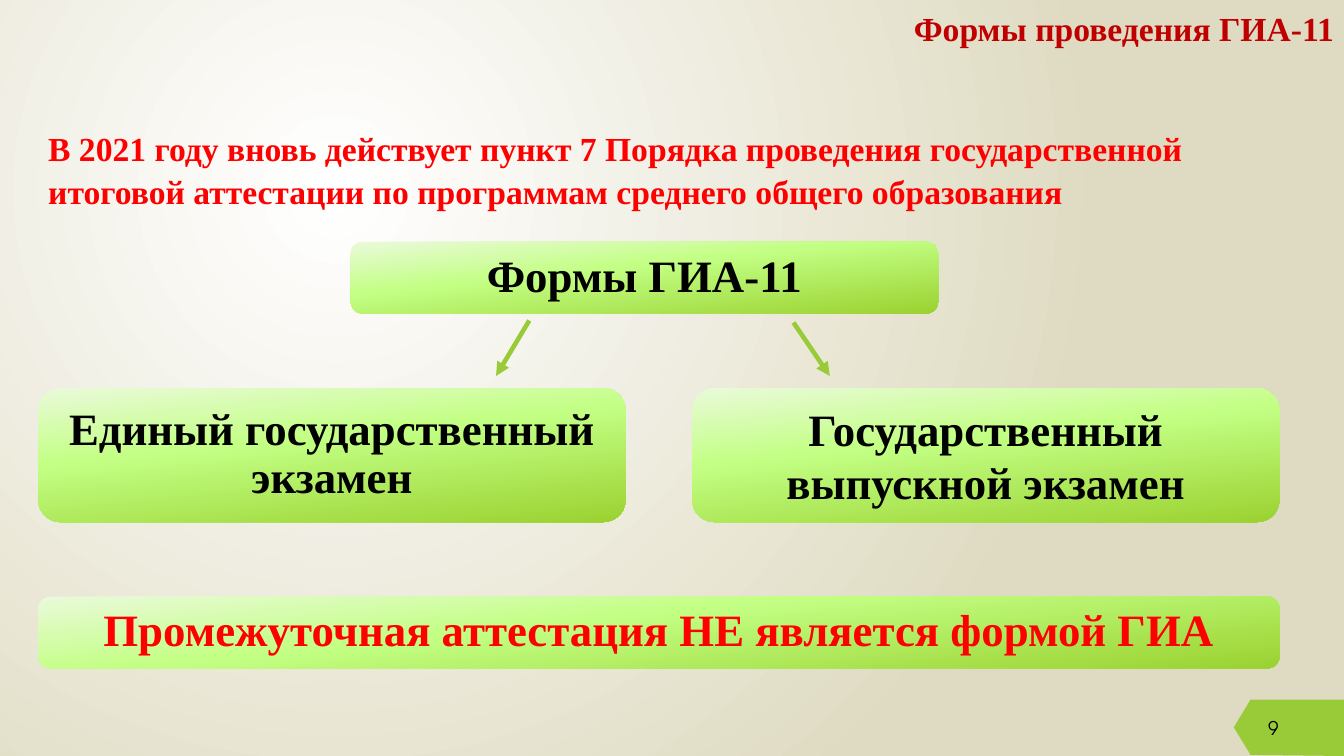
from dataclasses import dataclass

from lxml import etree
from pptx import Presentation
from pptx.dml.color import RGBColor
from pptx.enum.shapes import MSO_CONNECTOR, MSO_SHAPE
from pptx.enum.text import MSO_ANCHOR, MSO_AUTO_SIZE, PP_ALIGN
from pptx.oxml.ns import qn
from pptx.util import Inches, Pt

ROUND_RECT = MSO_SHAPE.ROUNDED_RECTANGLE
STRAIGHT = MSO_CONNECTOR.STRAIGHT
TOP, MIDDLE = MSO_ANCHOR.TOP, MSO_ANCHOR.MIDDLE
LEFT, CENTER, RIGHT = PP_ALIGN.LEFT, PP_ALIGN.CENTER, PP_ALIGN.RIGHT
NO_FIT = MSO_AUTO_SIZE.NONE


@dataclass(frozen=True)
class Theme:
    serif: str = "Times New Roman"
    sans: str = "TeX Gyre Adventor"
    black: str = "000000"
    red: str = "FF0000"
    dark_red: str = "C00000"
    green: str = "99CB38"
    backdrop: tuple = ((0, "FFFFFF"), (100, "DFDBC2"))
    card: tuple = ((0, "EAFADA"), (40, "C3FF84"), (100, "9BD231"))
    card_angle: int = 84
    text: float = 24
    heading: float = 32
    number: float = 13.5
    arrow: float = 3.25


class Deck:
    def __init__(self, theme):
        self.theme = theme
        self.prs = Presentation()
        self.prs.slide_width = Inches(13.33)
        self.prs.slide_height = Inches(7.5)
        self.s = self.prs.slides.add_slide(self.prs.slide_layouts[5])

    def x(self, share):
        return round(self.prs.slide_width * share / 100)

    def y(self, share):
        return round(self.prs.slide_height * share / 100)

    def box(self, left, top, width, height):
        return self.x(left), self.y(top), self.x(width), self.y(height)

    def gradient(self, fill, element, stops, angle=None):
        fill.gradient()
        grad = element.find(".//" + qn("a:gradFill"))
        for child in list(grad):
            grad.remove(child)
        gs_lst = etree.SubElement(grad, qn("a:gsLst"))
        for position, color in stops:
            gs = etree.SubElement(gs_lst, qn("a:gs"), pos=str(position * 1000))
            etree.SubElement(gs, qn("a:srgbClr"), val=color)
        if angle is None:
            circle = etree.SubElement(grad, qn("a:path"), {"path": "circle"})
            etree.SubElement(circle, qn("a:fillToRect"),
                             l="50000", t="50000", r="100000", b="100000")
        else:
            etree.SubElement(grad, qn("a:lin"), ang=str(angle * 60000), scaled="0")

    def background(self):
        self.gradient(self.s.background.fill, self.s.element, self.theme.backdrop)

    def fill_text(self, sp, text, size, color, align=LEFT, anchor=TOP, font=None,
                  bold=True, spacing=1.0, after=0):
        tf = sp.text_frame
        tf.word_wrap = True
        tf.auto_size = NO_FIT
        tf.vertical_anchor = anchor
        p = tf.paragraphs[0]
        p.alignment = align
        p.line_spacing = spacing
        p.space_before = Pt(0)
        p.space_after = Pt(after)
        r = p.add_run()
        r.text = text
        r.font.name = font or self.theme.serif
        r.font.size = Pt(size)
        r.font.bold = bold
        r.font.color.rgb = RGBColor.from_string(color)

    def title(self, text, *area):
        sp = self.s.shapes.title
        sp.left, sp.top, sp.width, sp.height = self.box(*area)
        self.fill_text(sp, text, self.theme.text, self.theme.dark_red, RIGHT,
                       spacing=1.06)

    def text(self, text, area, size, color, **style):
        sp = self.s.shapes.add_textbox(*self.box(*area))
        self.fill_text(sp, text, size, color, **style)

    def card(self, text, area, color=None, tight=True):
        sp = self.s.shapes.add_shape(ROUND_RECT, *self.box(*area))
        sp.shadow.inherit = False
        sp.line.fill.background()
        self.gradient(sp.fill, sp.element, self.theme.card, self.theme.card_angle)
        size = self.theme.heading
        self.fill_text(sp, text, size, color or self.theme.black, CENTER, MIDDLE,
                       spacing=0.9 if tight else 1.0, after=size * 0.35 if tight else 0)

    def arrow(self, x1, y1, x2, y2):
        c = self.s.shapes.add_connector(
            STRAIGHT, self.x(x1), self.y(y1), self.x(x2), self.y(y2))
        c.line.color.rgb = RGBColor.from_string(self.theme.green)
        c.line.width = Pt(self.theme.arrow)
        ln = c.element.find(".//" + qn("a:ln"))
        etree.SubElement(ln, qn("a:tailEnd"), type="triangle")
        etree.SubElement(c.element.spPr, qn("a:effectLst"))

    def tag(self, points):
        corners = [(self.x(x), self.y(y)) for x, y in points]
        fb = self.s.shapes.build_freeform(*corners[0])
        fb.add_line_segments(corners[1:], close=True)
        sp = fb.convert_to_shape()
        sp.shadow.inherit = False
        sp.fill.solid()
        sp.fill.fore_color.rgb = RGBColor.from_string(self.theme.green)
        sp.line.fill.background()


def main():
    theme = Theme()
    deck = Deck(theme)
    margin, full, gutter = 2.85, 92.35, 4.95
    half = (full - gutter) / 2
    low, high = 9.47, 17.73

    deck.background()
    deck.tag([(91.8, 96.2), (93.05, 92.55), (100, 92.55),
              (100, 100), (93.05, 99.85)])
    deck.title("Формы проведения ГИА-11", 25.55, 0, 74.45, 8.8)
    deck.text("9", (93.62, 93.6, 6.38, 5.33), theme.number, theme.black,
              anchor=MIDDLE, font=theme.sans, bold=False)
    deck.text("В 2021 году вновь действует пункт 7 Порядка проведения государственной "
              "итоговой аттестации по программам среднего общего образования",
              (margin, 16, full, 12.13), theme.text, theme.red, spacing=1.06)

    exams = [("Единый государственный экзамен", True),
             ("Государственный выпускной экзамен", False)]
    for column, (name, tight) in enumerate(exams):
        deck.card(name, (margin + column * (half + gutter), 51.33, half, high),
                  tight=tight)
    deck.card("Формы ГИА-11", (26.1, 32, half, low))
    deck.arrow(39.38, 42.4, 36.91, 49.73)
    deck.arrow(59.04, 42.67, 61.74, 49.73)
    deck.card("Промежуточная аттестация НЕ является формой ГИА",
              (margin, 78.93, full, low), theme.red)
    deck.prs.save("out.pptx")


if __name__ == "__main__":
    main()
